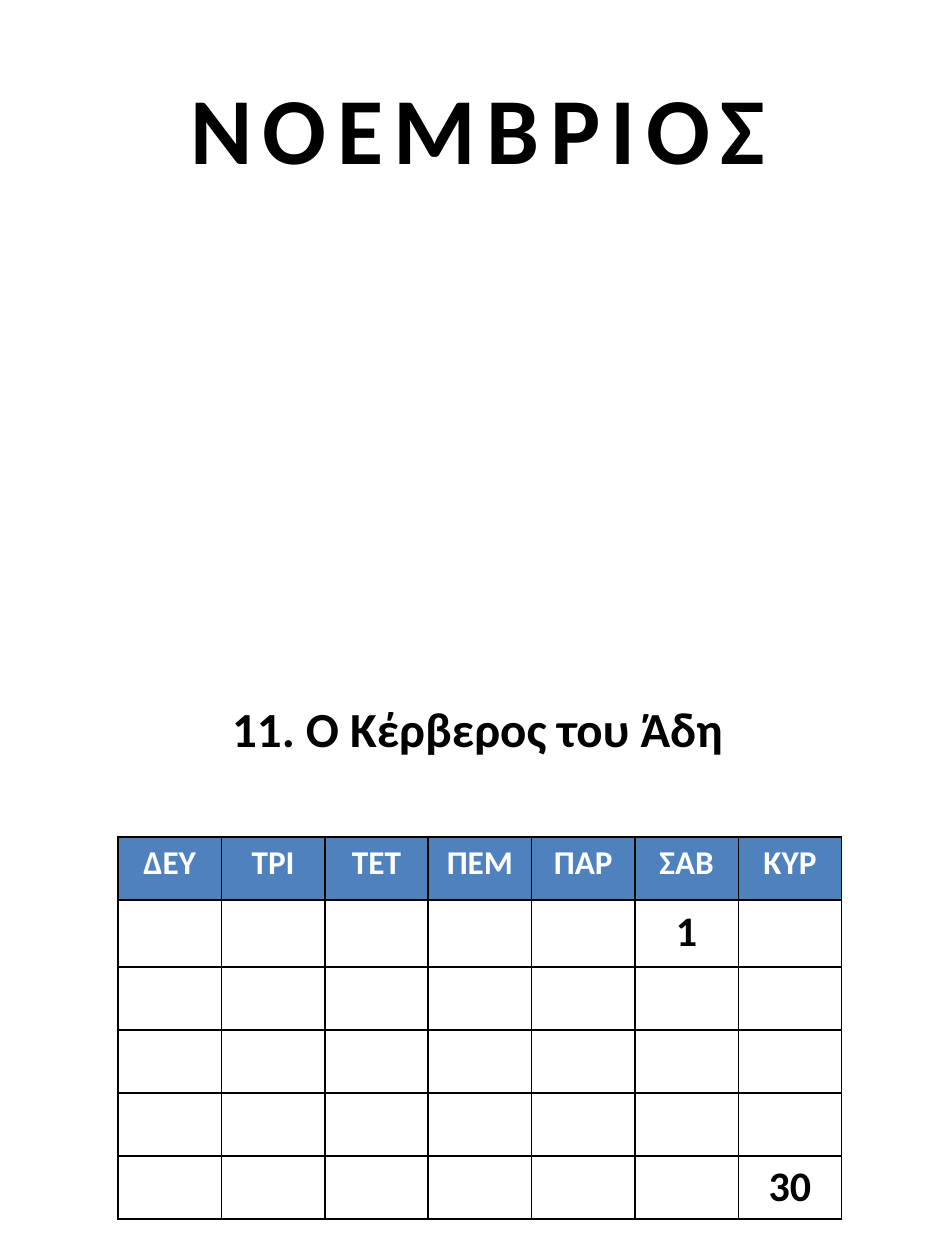
from lxml import etree
from pptx import Presentation, util as u
from pptx.dml.color import RGBColor
from pptx.enum import text
from pptx.oxml import ns

PX = 914400 // 126
BLACK = RGBColor(0x00, 0x00, 0x00)
WHITE = RGBColor(0xFF, 0xFF, 0xFF)
BLUE = RGBColor(0x4F, 0x81, 0xBD)
FONT = "Calibri"

DAYS = ["ΔΕΥ", "ΤΡΙ", "ΤΕΤ", "ΠΕΜ", "ΠΑΡ", "ΣΑΒ", "ΚΥΡ"]
DATES = {(1, 5): "1", (5, 6): "30"}  # (row, column) of the printed dates
ROW_HEIGHTS = [63, 67, 63, 63, 63, 63]


def line_element(tag):
    """A solid black line of 1 pt, for text outlines and cell borders."""
    line = etree.Element(ns.qn(tag), w=str(u.Pt(1)))
    fill = etree.SubElement(line, ns.qn("a:solidFill"))
    etree.SubElement(fill, ns.qn("a:srgbClr"), val=str(BLACK))
    return line


def write(paragraph, words, size, color):
    paragraph.text = words
    paragraph.alignment = text.PP_ALIGN.CENTER
    font = paragraph.font
    font.name, font.size, font.bold = FONT, u.Pt(size), True
    font.color.rgb = color


def add_heading(slide, box, words, size):
    shape = slide.shapes.add_textbox(*(n * PX for n in box))
    frame = shape.text_frame
    frame.word_wrap = True
    frame.auto_size = text.MSO_AUTO_SIZE.SHAPE_TO_FIT_TEXT
    paragraph = frame.paragraphs[0]
    write(paragraph, words, size, BLACK)
    return paragraph


def add_month(slide, box, words):
    run = add_heading(slide, box, words, 54).runs[0]
    run.font.color.rgb = BLACK
    properties = run.font._element
    properties.set("spc", "600")
    properties.insert(0, line_element("a:ln"))


def style_cell(cell, color):
    if color is None:
        cell.fill.background()
    else:
        cell.fill.solid()
        cell.fill.fore_color.rgb = color
    properties = cell._tc.get_or_add_tcPr()
    for index, side in enumerate("LRTB"):
        properties.insert(index, line_element(f"a:ln{side}"))


def add_calendar(slide, box):
    left, top, width, height = (n * PX for n in box)
    table = slide.shapes.add_table(
        len(ROW_HEIGHTS), len(DAYS), left, top, width, height).table
    for column in table.columns:
        column.width = width // len(DAYS)
    for r, row in enumerate(table.rows):
        row.height = ROW_HEIGHTS[r] * PX
        for c, cell in enumerate(row.cells):
            style_cell(cell, BLUE if r == 0 else None)
            paragraph = cell.text_frame.paragraphs[0]
            if r == 0:
                write(paragraph, DAYS[c], 19, WHITE)
            elif (r, c) in DATES:
                write(paragraph, DATES[r, c], 24, BLACK)


def main():
    presentation = Presentation()
    presentation.slide_width = 945 * PX
    presentation.slide_height = 1260 * PX
    slide = presentation.slides.add_slide(presentation.slide_layouts[6])

    # Month name
    add_month(slide, (76, 64, 804, 127), "ΝΟΕΜΒΡΙΟΣ")
    # Caption
    add_heading(slide, (160, 692, 635, 72), "11. Ο Κέρβερος του Άδη", 28)
    # Calendar grid
    add_calendar(slide, (118, 837, 724, sum(ROW_HEIGHTS)))

    presentation.save("out.pptx")


if __name__ == "__main__":
    main()
